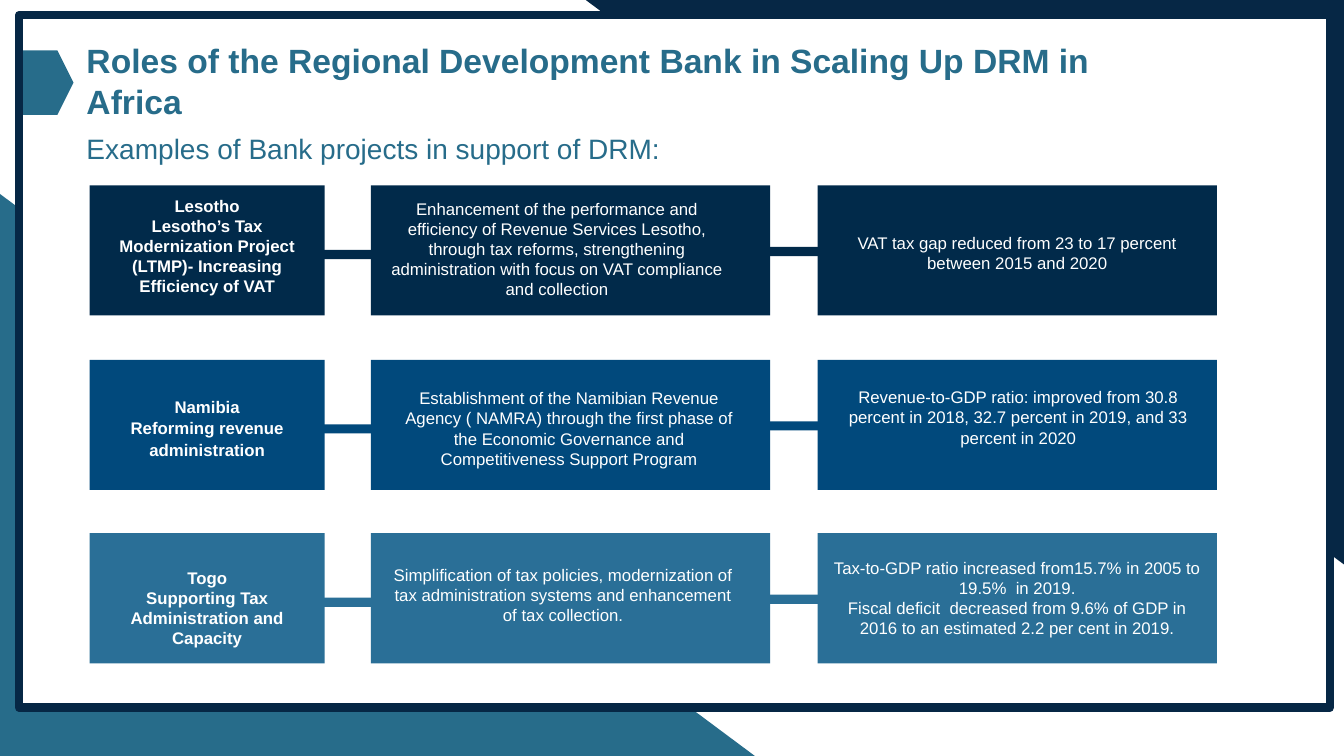
from pptx import Presentation
from pptx.dml.color import RGBColor
from pptx.enum.shapes import MSO_SHAPE
from pptx.enum.text import MSO_AUTO_SIZE, PP_ALIGN
from pptx.util import Emu, Pt

PX = 9144  # EMU per px, 100 px to the inch

WHITE = RGBColor(0xFF, 0xFF, 0xFF)
INK = RGBColor(0x06, 0x27, 0x45)
TEAL = RGBColor(0x27, 0x6C, 0x8A)
NAVY = RGBColor(0x01, 0x2A, 0x4A)
BLUE = RGBColor(0x01, 0x49, 0x7C)
STEEL = RGBColor(0x2A, 0x6F, 0x97)

# Grid of project cards
COLUMNS = [(89, 233), (368, 396), (811, 396)]  # left, width
TEXT_WIDTHS = [233, 369, 396]
ROW_TOPS = [184, 357, 529]
CARD_HEIGHT = 129
LINKS = [(316, 64), (761, 61)]  # left, offset below the row top
LINK_WIDTH, LINK_HEIGHT = 54, 9

# Per row: colour, line spacing of the country cell, and three cells of
# (offset right, offset down, line count, paragraphs)
PROJECTS = [
    (NAVY, 1.0, [
        (0, 5, 5, ["Lesotho",
                   "Lesotho’s Tax Modernization Project (LTMP)- Increasing Efficiency of VAT"]),
        (0, 8, 5, ["Enhancement of the performance and efficiency of Revenue Services Lesotho, "
                   "through tax reforms, strengthening administration with focus on "
                   "VAT compliance and collection"]),
        (0, 42, 2, ["VAT tax gap reduced from 23 to 17 percent between 2015 and 2020"]),
    ]),
    (BLUE, 1.07, [
        (0, 30, 3, ["Namibia", "Reforming revenue administration"]),
        (12, 23, 4, ["Establishment of the Namibian Revenue Agency ( NAMRA) through the first "
                     "phase of the Economic Governance and Competitiveness Support Program"]),
        (1, 22, 3, ["Revenue-to-GDP ratio: improved from 30.8 percent in 2018, "
                    "32.7 percent in 2019, and 33 percent in 2020"]),
    ]),
    (STEEL, 1.0, [
        (0, 29, 4, ["Togo", "Supporting Tax Administration and Capacity"]),
        (6, 26, 3, ["Simplification of tax policies, modernization of tax administration "
                    "systems and enhancement of tax collection."]),
        (0, 19, 4, ["Tax-to-GDP ratio increased from15.7% in 2005 to 19.5%  in 2019.",
                    "Fiscal deficit  decreased from 9.6% of GDP in 2016 to an estimated "
                    "2.2 per cent in 2019."]),
    ]),
]


def px(*lengths):
    return [Emu(length * PX) for length in lengths]


def add_block(slide, kind, box, fill, border=None):
    block = slide.shapes.add_shape(kind, *px(*box))
    block.shadow.inherit = False
    block.fill.solid()
    block.fill.fore_color.rgb = fill
    if border:
        block.line.color.rgb = border
        block.line.width = Pt(6)
    else:
        block.line.fill.background()
    return block


def add_label(slide, box, lines, size, color, bold=False,
              align=PP_ALIGN.LEFT, spacing=1.0):
    frame = slide.shapes.add_textbox(*px(*box)).text_frame
    frame.word_wrap = True
    frame.auto_size = MSO_AUTO_SIZE.SHAPE_TO_FIT_TEXT
    frame.text = "\n".join(lines)
    for paragraph in frame.paragraphs:
        paragraph.alignment = align
        paragraph.line_spacing = spacing
        for run in paragraph.runs:
            run.font.name = "Arial"
            run.font.size = Pt(size)
            run.font.bold = bold
            run.font.color.rgb = color


def add_backdrop(slide):
    corner = add_block(slide, MSO_SHAPE.RIGHT_TRIANGLE, (581, 0, 752, 560), INK)
    corner.rotation = 180
    add_block(slide, MSO_SHAPE.RIGHT_TRIANGLE, (-2, 191, 752, 560), TEAL)
    panel = add_block(slide, MSO_SHAPE.ROUNDED_RECTANGLE, (19, 15, 1300, 687), WHITE, INK)
    panel.adjustments[0] = 0


def add_project(slide, top, color, country_spacing, cells):
    for left, width in COLUMNS:
        add_block(slide, MSO_SHAPE.RECTANGLE, (left, top, width, CARD_HEIGHT), color)
    for column, (right, down, line_count, lines) in enumerate(cells):
        is_country = column == 0
        box = (COLUMNS[column][0] + right, top + down,
               TEXT_WIDTHS[column], 20 * line_count + 11)
        add_label(slide, box, lines, 12, WHITE, is_country, PP_ALIGN.CENTER,
                  country_spacing if is_country else 1.0)
    for left, down in LINKS:
        add_block(slide, MSO_SHAPE.RECTANGLE,
                  (left, top + down, LINK_WIDTH, LINK_HEIGHT), color)


def main():
    deck = Presentation()
    deck.slide_width, deck.slide_height = px(1333, 750)
    slide = deck.slides.add_slide(deck.slide_layouts[6])

    add_backdrop(slide)

    # Heading
    add_label(slide, (76, 35, 1090, 50),
              ["Roles of the Regional Development Bank in Scaling Up DRM in Africa"],
              24, TEAL, bold=True)
    tab = add_block(slide, MSO_SHAPE.PENTAGON, (23, 50, 50, 64), TEAL)
    tab.adjustments[0] = 0.32
    add_label(slide, (76, 126, 1204, 44),
              ["Examples of Bank projects in support of DRM:"], 20, TEAL)

    # Projects, one row each
    for top, project in zip(ROW_TOPS, PROJECTS):
        add_project(slide, top, *project)

    deck.save("out.pptx")


if __name__ == "__main__":
    main()
